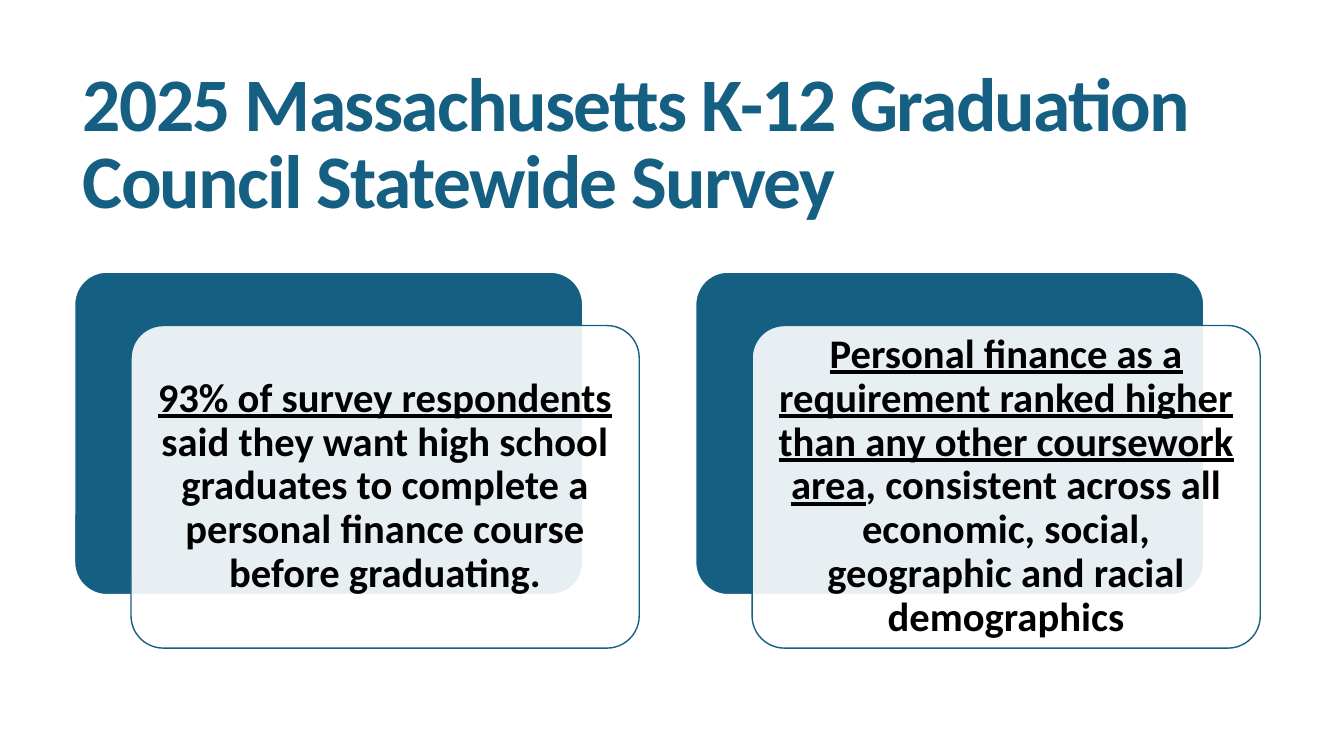
from lxml.etree import SubElement
from pptx import Presentation
from pptx.dml.color import RGBColor
from pptx.enum.shapes import MSO_SHAPE
from pptx.enum.text import MSO_ANCHOR, MSO_AUTO_SIZE, PP_ALIGN
from pptx.oxml.ns import qn
from pptx.util import Inches, Pt

COLORS = {name: RGBColor.from_string(value) for name, value in {
    "teal": "156082", "white": "FFFFFF", "black": "000000"}.items()}
FINDINGS = [
    ("93% of survey respondents ",
     "said they want high school graduates to complete a personal finance "
     "course before graduating."),
    ("Personal finance as a requirement ranked higher than any other "
     "coursework area",
     ", consistent across all economic, social, geographic and racial "
     "demographics"),
]


def add_panel(left, top, fill, line):
    panel = slide.shapes.add_shape(MSO_SHAPE.ROUNDED_RECTANGLE, Inches(left),
                                   Inches(top), Inches(5.04), Inches(3.2))
    panel.adjustments[0] = 0.1
    panel.shadow.inherit = False
    panel.fill.solid()
    panel.fill.fore_color.rgb = COLORS[fill]
    panel.line.color.rgb = COLORS[line]
    panel.line.width = Pt(1)
    return panel


def style_run(run, size, color):
    run.font.name = "Calibri"
    run.font.size = Pt(size)
    run.font.bold = True
    run.font.color.rgb = COLORS[color]


presentation = Presentation()
presentation.slide_width = Inches(13.33)
presentation.slide_height = Inches(7.5)
slide = presentation.slides.add_slide(presentation.slide_layouts[5])

# Title
title = slide.shapes.title
title.left, title.top = Inches(0.72), Inches(0.55)
title.width, title.height = Inches(11.78), Inches(1.81)
title_frame = title.text_frame
title_frame.text = "2025 Massachusetts K-12 Graduation Council Statewide Survey"
title_frame.word_wrap = True
title_frame.auto_size = MSO_AUTO_SIZE.NONE
title_frame.vertical_anchor = MSO_ANCHOR.MIDDLE
paragraph = title_frame.paragraphs[0]
paragraph.alignment = PP_ALIGN.LEFT
paragraph.line_spacing = 0.85
title_run = paragraph.runs[0]
style_run(title_run, 54, "teal")
title_run._r.get_or_add_rPr().set("spc", "-120")

# Survey findings: a teal panel behind a translucent card
for index, finding in enumerate(FINDINGS):
    left = 0.74 + index * 6.16
    add_panel(left, 2.7, "teal", "white")
    card = add_panel(left + 0.56, 3.23, "white", "teal")
    card_color = card.fill._xPr.find(qn("a:solidFill"))[0]
    SubElement(card_color, qn("a:alpha")).set("val", "90000")

    text_frame = card.text_frame
    text_frame.word_wrap = True
    text_frame.vertical_anchor = MSO_ANCHOR.MIDDLE
    text_frame.margin_left = text_frame.margin_right = Inches(0.12)
    text_frame.margin_top = text_frame.margin_bottom = Inches(0.12)
    paragraph = text_frame.paragraphs[0]
    paragraph.alignment = PP_ALIGN.CENTER
    paragraph.line_spacing = 0.9
    for part, text in enumerate(finding):
        run = paragraph.add_run()
        run.text = text
        style_run(run, 29, "black")
        run.font.underline = part == 0

presentation.save("out.pptx")
